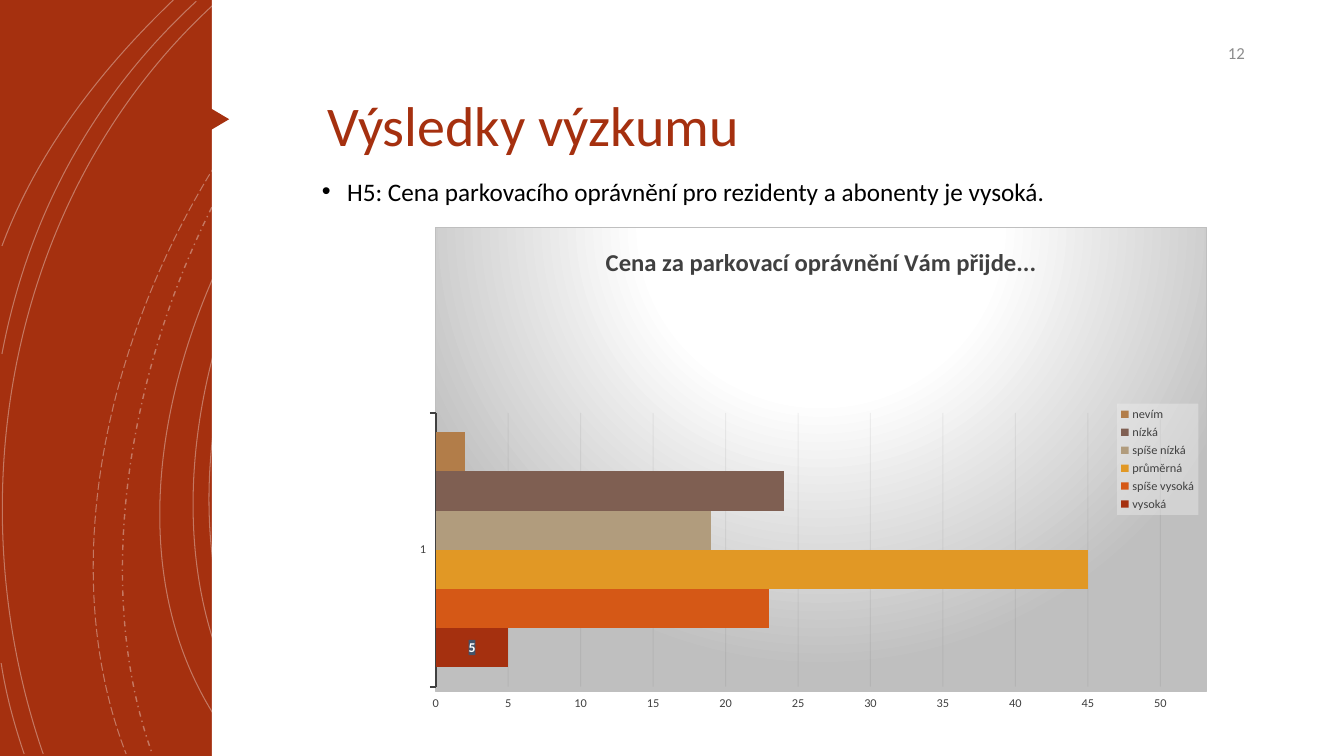
import pptx
import pptx.chart.data
import pptx.dml.color
import pptx.enum.chart
import pptx.enum.dml
import pptx.enum.shapes
import pptx.enum.text
import pptx.oxml
import pptx.oxml.ns
import pptx.util
from pptx.util import Cm, Pt

FONT = "Calibri"
RED, WHITE, GREY, DARK = "A5300F", "FFFFFF", "BFBFBF", "404040"
WIDTH, HEIGHT = 33.87, 19.05
NS = pptx.oxml.ns.nsdecls("a")
SHAPES = pptx.enum.shapes.MSO_SHAPE
DASHES = pptx.enum.dml.MSO_LINE

# Bezier control points in cm, then dash style and line width
ARCS = [
    ((11.79, 0), (6.2, 3.38), (2.79, 13.74), (7.47, 19), "SOLID", 0.75),
    ((11.46, 0), (5.87, 3.51), (2.46, 13.54), (6.91, 19), "SOLID", 0.75),
    ((10.85, 0), (5.51, 3.73), (1.35, 13.44), (6.12, 19), "SOLID", 0.75),
    ((9.22, 0), (4.47, 4.22), (1.65, 12.93), (3.84, 19), "DASH_DOT", 1),
    ((8.92, 0), (3.99, 4.29), (0.74, 12.67), (3.18, 19), "LONG_DASH", 0.75),
    ((5.51, 0), (0.28, 4.7), (-1.17, 12.45), (1.09, 19), "SOLID", 0.75),
    ((4.95, 0.03), (2.34, 2.44), (0.71, 5.44), (0.05, 8.92), "SOLID", 0.75),
    ((0.03, 16.71), (0.15, 17.5), (0.36, 18.26), (0.61, 19), "SOLID", 0.75),
    ((4.37, 0), (2.54, 1.75), (0.94, 3.81), (0.05, 6.2), "SOLID", 0.75),
]

ANSWERS = [
    ("vysoká", 5, RED),
    ("spíše vysoká", 23, "D55816"),
    ("průměrná", 45, "E19825"),
    ("spíše nízká", 19, "B19C7D"),
    ("nízká", 24, "7F5F52"),
    ("nevím", 2, "B27D49"),
]


def rgb(color):
    return pptx.dml.color.RGBColor.from_string(color)


def set_alpha(fill_parent, percent):
    for clr in fill_parent.iter(pptx.oxml.ns.qn("a:srgbClr")):
        clr.append(pptx.oxml.parse_xml(f'<a:alpha {NS} val="{percent * 1000}"/>'))


def set_font(font, size, color, bold=False):
    font.name, font.size, font.bold = FONT, Pt(size), bold
    font.color.rgb = rgb(color)


def set_line(line, color, width):
    line.color.rgb = rgb(color)
    line.width = Pt(width)


def add_block(s, kind, x, y, w, h, color, rotation=0):
    sp = s.shapes.add_shape(kind, Cm(x), Cm(y), Cm(w), Cm(h))
    sp.shadow.inherit = False
    sp.fill.solid()
    sp.fill.fore_color.rgb = rgb(color)
    sp.line.fill.background()
    sp.rotation = rotation


def add_arc(s, start, control1, control2, end, dash, width):
    builder = s.shapes.build_freeform(Cm(start[0]), Cm(start[1]))
    builder.add_line_segments(
        [(Cm(x), Cm(y)) for x, y in (control1, control2, end)], close=False)
    sp = builder.convert_to_shape()
    # Turn the three straight segments into one Bezier curve
    segments = list(sp._element.iter(pptx.oxml.ns.qn("a:lnTo")))
    curve = pptx.oxml.parse_xml(f'<a:cubicBezTo {NS}/>')
    segments[0].addprevious(curve)
    for segment in segments:
        curve.append(segment[0])
        segment.getparent().remove(segment)
    sp.shadow.inherit = False
    sp.fill.background()
    set_line(sp.line, WHITE, width)
    sp.line.dash_style = getattr(DASHES, dash)
    set_alpha(sp.line._get_or_add_ln(), 35)


def add_text(s, text, x, y, w, h, size, color, spacing=1.0, bullet=False):
    tf = s.shapes.add_textbox(Cm(x), Cm(y), Cm(w), Cm(h)).text_frame
    tf.word_wrap = True
    p = tf.paragraphs[0]
    p.text = text
    p.line_spacing = spacing
    if bullet:
        pPr = p._p.get_or_add_pPr()
        pPr.set("marL", str(Cm(0.64)))
        pPr.set("indent", str(-Cm(0.64)))
        pPr.append(pptx.oxml.parse_xml(f'<a:buFont {NS} typeface="Arial"/>'))
        pPr.append(pptx.oxml.parse_xml(f'<a:buChar {NS} char="•"/>'))
    set_font(p.runs[0].font, size, color)
    return tf


def area_style(parent, fill_xml, line_xml="<a:ln><a:noFill/></a:ln>"):
    """Give a chart part (chart space, legend or labels) a fill and a border."""
    spPr = pptx.oxml.parse_xml(
        f'<c:spPr {pptx.oxml.ns.nsdecls("c", "a")}>{fill_xml}{line_xml}</c:spPr>')
    parent.find(pptx.oxml.ns.qn("c:txPr")).addprevious(spPr)


def solid_xml(color, percent):
    return (f'<a:solidFill><a:srgbClr val="{color}"><a:alpha val="{percent * 1000}"/>'
            f'</a:srgbClr></a:solidFill>')


def style_axes(chart):
    cat, val = chart.category_axis, chart.value_axis
    for axis in (cat, val):
        axis.major_tick_mark = pptx.enum.chart.XL_TICK_MARK.OUTSIDE
        set_font(axis.tick_labels.font, 9, DARK)
    set_line(cat.format.line, DARK, 1.5)
    val.format.line.fill.background()
    val.minimum_scale, val.maximum_scale, val.major_unit = 0, 50, 5
    grid = val.major_gridlines.format.line
    set_line(grid, "0D0D0D", 0.75)
    set_alpha(grid._get_or_add_ln(), 5)


def add_price_chart(s):
    data = pptx.chart.data.CategoryChartData()
    data.categories = ["1"]
    for name, value, _ in ANSWERS:
        data.add_series(name, [value])
    chart = s.shapes.add_chart(
        pptx.enum.chart.XL_CHART_TYPE.BAR_CLUSTERED,
        Cm(10.58), Cm(5.71), Cm(19.84), Cm(12.19), data).chart
    set_font(chart.font, 10, "000000")

    # Title and legend
    chart.has_title = True
    tf = chart.chart_title.text_frame
    tf.text = "Cena za parkovací oprávnění Vám přijde..."
    set_font(tf.paragraphs[0].runs[0].font, 18, DARK, bold=True)
    chart.has_legend = True
    chart.legend.position = pptx.enum.chart.XL_LEGEND_POSITION.RIGHT
    chart.legend.include_in_layout = False
    set_font(chart.legend.font, 9, DARK)
    area_style(chart.legend._element, solid_xml("F2F2F2", 39))

    # Bars
    plot = chart.plots[0]
    plot.gap_width, plot.overlap, plot.vary_by_categories = 100, 0, False
    for series, (_, _, color) in zip(plot.series, ANSWERS):
        series.format.fill.solid()
        series.format.fill.fore_color.rgb = rgb(color)
    labels = plot.series[0].data_labels
    labels.show_value = True
    labels.position = pptx.enum.chart.XL_LABEL_POSITION.CENTER
    set_font(labels.font, 10, WHITE, bold=True)
    area_style(labels._element, solid_xml("44546A", 75))
    style_axes(chart)

    # Plot position
    plot_area = chart._chartSpace.chart.plotArea
    for old in plot_area.findall(pptx.oxml.ns.qn("c:layout")):
        plot_area.remove(old)
    places = "".join(f'<c:{k} val="{v}"/>' for k, v in (
        ("layoutTarget", "inner"), ("xMode", "edge"), ("yMode", "edge"),
        ("x", 0), ("y", 0.4), ("w", 0.94), ("h", 0.59)))
    plot_area.insert(0, pptx.oxml.parse_xml(
        f'<c:layout {pptx.oxml.ns.nsdecls("c")}><c:manualLayout>{places}'
        f'</c:manualLayout></c:layout>'))

    # Radial background
    stops = "".join(f'<a:gs pos="{pos * 1000}"><a:srgbClr val="{color}"/></a:gs>'
                    for pos, color in ((0, WHITE), (39, WHITE), (100, GREY)))
    area_style(
        chart._chartSpace,
        f'<a:gradFill><a:gsLst>{stops}</a:gsLst><a:path path="circle">'
        '<a:fillToRect l="50000" t="-80000" r="50000" b="180000"/></a:path></a:gradFill>',
        f'<a:ln w="{Pt(0.75)}"><a:solidFill><a:srgbClr val="{GREY}"/></a:solidFill></a:ln>')


def main():
    prs = pptx.Presentation()
    prs.slide_width, prs.slide_height = Cm(WIDTH), Cm(HEIGHT)
    s = prs.slides.add_slide(prs.slide_layouts[6])

    # Red side band with arcs, and the white page over it
    add_block(s, SHAPES.RECTANGLE, 0, 0, WIDTH, HEIGHT, RED)
    for arc in ARCS:
        add_arc(s, *arc)
    add_block(s, SHAPES.RECTANGLE, 5.34, 0, WIDTH - 5.34, HEIGHT, WHITE)
    add_block(s, SHAPES.ISOSCELES_TRIANGLE, 5, 2.65, 0.84, 0.71, RED, rotation=90)

    # Title, page number and hypothesis
    add_text(s, "Výsledky výzkumu", 8, 2.34, 17.3, 3.43, 40, RED, spacing=0.9)
    tf = add_text(s, "12", 29.08, 0.89, 2.54, 0.89, 12, "8C8C8C")
    tf.vertical_anchor = pptx.enum.text.MSO_ANCHOR.MIDDLE
    tf.paragraphs[0].alignment = pptx.enum.text.PP_ALIGN.RIGHT
    add_text(s, "H5: Cena parkovacího oprávnění pro rezidenty a abonenty je vysoká.",
             7.86, 4.2, 23.04, 10.57, 18, "000000", spacing=1.15, bullet=True)

    # Survey answers
    add_price_chart(s)
    prs.save("out.pptx")


if __name__ == "__main__":
    main()
